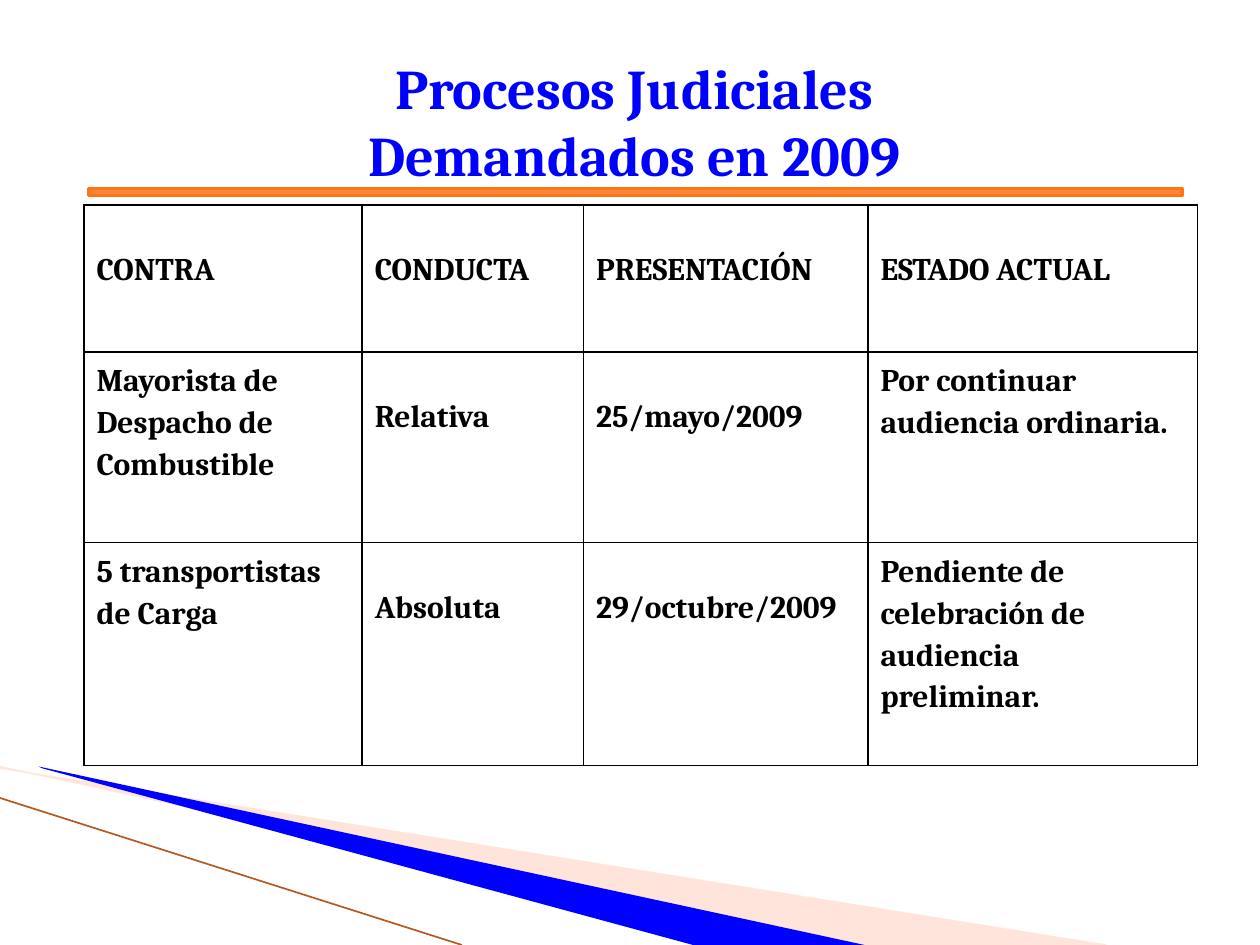
from pptx import Presentation, util as u
from pptx.dml import color as c
from pptx.enum import shapes, text
from pptx.oxml import ns, xmlchemy as x

Pt = u.Pt
BASE = dict(name="Cambria", bold=True)


def rgb(code):
    return c.RGBColor.from_string(code)


def child(node, tag, **vals):
    item = x.OxmlElement(tag)
    for key, val in vals.items():
        item.set(key, str(val))
    node.append(item)
    return item


class Deck:
    def __init__(self, wide, high):
        self.prs = Presentation()
        self.prs.slide_width, self.prs.slide_height = Pt(wide), Pt(high)
        self.slide = self.prs.slides.add_slide(self.prs.slide_layouts[5])

    def font(self, para, size, color):
        for key, val in dict(BASE, size=Pt(size)).items():
            setattr(para.font, key, val)
        para.font.color.rgb = rgb(color)

    def paint(self, shape, fill, line=None, width=1, alpha=None):
        shape.shadow.inherit = False
        shape.fill.solid()
        shape.fill.fore_color.rgb = rgb(fill)
        if alpha:
            solid = shape._element.spPr.find(ns.qn("a:solidFill"))
            child(solid[0], "a:alpha", val=alpha * 1000)
        if line:
            shape.line.color.rgb = rgb(line)
            shape.line.width = Pt(width)
        else:
            shape.line.fill.background()

    def wedge(self, points, **look):
        form = self.slide.shapes.build_freeform(*points[0], scale=Pt(1))
        form.add_line_segments(points[1:])
        self.paint(form.convert_to_shape(), **look)

    def line(self, start, end, color, width):
        rule = self.slide.shapes.add_connector(
            shapes.MSO_CONNECTOR.STRAIGHT, *map(Pt, start + end))
        rule.line.color.rgb = rgb(color)
        rule.line.width = Pt(width)
        child(rule._element.spPr, "a:effectLst")

    def bar(self, box, **look):
        kind = shapes.MSO_SHAPE.MATH_MINUS
        self.paint(self.slide.shapes.add_shape(kind, *map(Pt, box)), **look)

    def title(self, words, box, size, color):
        head = self.slide.shapes.title
        for key, val in zip(("left", "top", "width", "height"), box):
            setattr(head, key, Pt(val))
        frame = head.text_frame
        look = dict(word_wrap=True, auto_size=text.MSO_AUTO_SIZE.NONE,
                    vertical_anchor=text.MSO_ANCHOR.MIDDLE,
                    margin_top=Pt(5), margin_bottom=0)
        for key, val in look.items():
            setattr(frame, key, val)
        para = frame.paragraphs[0]
        para.text = words
        para.alignment = text.PP_ALIGN.CENTER
        self.font(para, size, color)

    def edge(self, cell, color, width):
        props = cell._tc.get_or_add_tcPr()
        for side in ("L", "R", "T", "B"):
            rim = child(props, "a:ln" + side, w=Pt(width))
            child(child(rim, "a:solidFill"), "a:srgbClr", val=color)

    def table(self, rows, spot, cols, highs, size, color):
        box = spot + (sum(cols), sum(highs))
        grid = self.slide.shapes.add_table(
            len(rows), len(cols), *map(Pt, box)).table
        grid.first_row = grid.horz_banding = False
        for col, wide in zip(grid.columns, cols):
            col.width = Pt(wide)
        for i, (row, high) in enumerate(zip(rows, highs)):
            grid.rows[i].height = Pt(high)
            for j, words in enumerate(row):
                cell = grid.cell(i, j)
                self.edge(cell, color, 1)
                cell.fill.background()
                if i == 0 or j in (1, 2):
                    cell.margin_top = Pt(24)
                para = cell.text_frame.paragraphs[0]
                para.text = words
                para.line_spacing = 1.15
                if i == 0:
                    para.alignment = text.PP_ALIGN.JUSTIFY
                self.font(para, size, color)


def main():
    deck = Deck(720, 540)
    deck.wedge([(0, 439), (632, 540), (469.5, 540), (0, 438.5)],
               fill="FFBCA5", line="FFE7D7", width=0.75, alpha=40)
    deck.wedge([(22.5, 438.5), (494.5, 539.5), (395.5, 540), (23.5, 439)],
               fill="0000FF")
    deck.line((0, 456), (264, 540), "B45A1E", 0.95)
    deck.bar((-62, 101.5, 850, 16.5), fill="FE8637", line="FF7415", width=2)
    deck.title("Procesos Judiciales\vDemandados en 2009",
               (48, 27.5, 629, 78), 32, "0000FF")
    rows = [
        ("CONTRA", "CONDUCTA", "PRESENTACIÓN", "ESTADO ACTUAL"),
        ("Mayorista de Despacho de Combustible", "Relativa",
         "25/mayo/2009", "Por continuar audiencia ordinaria."),
        ("5 transportistas de Carga", "Absoluta", "29/octubre/2009",
         "Pendiente de celebración de audiencia preliminar."),
    ]
    deck.table(rows, (48, 117), (159, 126.5, 162.5, 188.5),
               (84, 109, 127.5), 18, "000000")
    deck.prs.save("out.pptx")


if __name__ == "__main__":
    main()
